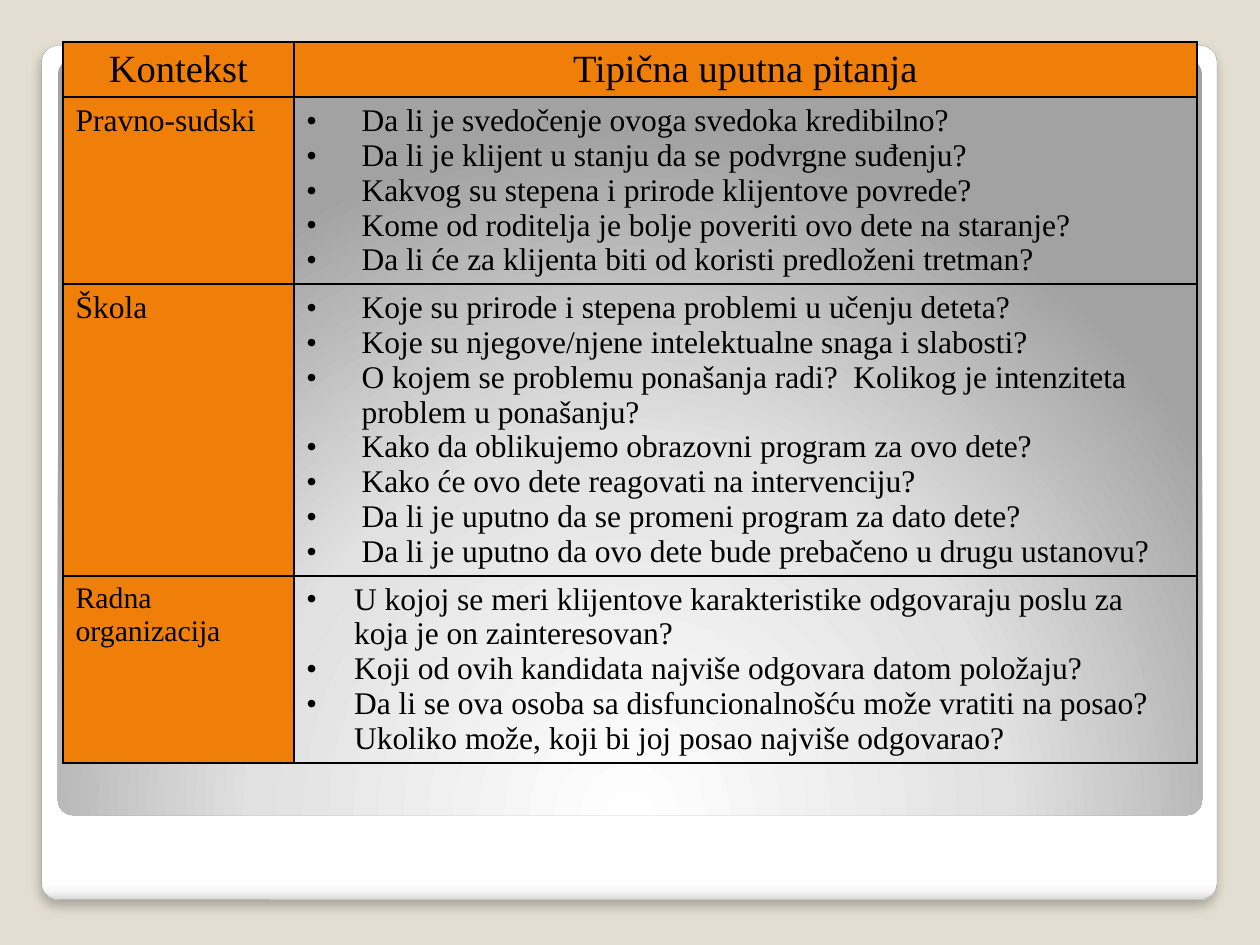
from dataclasses import dataclass

from lxml.etree import SubElement
from pptx import Presentation
from pptx.dml.color import RGBColor
from pptx.enum.shapes import MSO_SHAPE
from pptx.enum.text import PP_ALIGN
from pptx.oxml import parse_xml
from pptx.oxml.ns import nsdecls, qn
from pptx.util import Inches, Pt

COLORS = {
    "page": "E3DED1",
    "orange": "F07F09",
    "ink": "000000",
    "frame_line": "A4A4A4",
}
FONT = "Times New Roman"
BODY_SIZE = 18
HEADER_SIZE = 22
HEADERS = ("Kontekst", "Tipična uputna pitanja")
COLUMN_WIDTHS = (1.83, 7.17)
HEADER_HEIGHT = 0.44
HANGING = 0.38


@dataclass
class Panel:
    left: float
    top: float
    width: float
    height: float
    stops: tuple
    direction: str


@dataclass
class Context:
    name: str
    questions: tuple
    height: float
    indent: float = 0.44
    name_size: int = BODY_SIZE


PANELS = (
    Panel(0.33, 0.36, 9.33, 6.78,
          ((0, "FFFFFF"), (98, "FFFFFF"), (99, "F7F7F7"), (100, "DADADA")),
          '<a:lin ang="5400000" scaled="0"/>'),
    Panel(0.46, 0.47, 9.08, 6,
          ((0, "FFFFFF"), (55, "E1E1E1"), (100, "A2A2A2")),
          '<a:path path="circle"><a:fillToRect l="50000" t="175000" '
          'r="50000" b="-75000"/></a:path>'),
)

CONTEXTS = (
    Context("Pravno-sudski", (
        "Da li je svedočenje ovoga svedoka kredibilno?",
        "Da li je klijent u stanju da se podvrgne suđenju?",
        "Kakvog su stepena i prirode klijentove povrede?",
        "Kome od roditelja je bolje poveriti ovo dete na staranje?",
        "Da li će za klijenta biti od koristi predloženi tretman?",
    ), 1.48),
    Context("Škola", (
        "Koje su prirode i stepena problemi u učenju deteta?",
        "Koje su njegove/njene intelektualne snaga i slabosti?",
        "O kojem se problemu ponašanja radi?  Kolikog je intenziteta "
        "problem u ponašanju?",
        "Kako da oblikujemo obrazovni program za ovo dete?",
        "Kako će ovo dete reagovati na intervenciju?",
        "Da li je uputno da se promeni program za dato dete?",
        "Da li je uputno da ovo dete bude prebačeno u drugu ustanovu?",
    ), 2.31),
    Context("Radna organizacija", (
        "U kojoj se meri klijentove karakteristike odgovaraju poslu za "
        "koja je on zainteresovan?",
        "Koji od ovih kandidata najviše odgovara datom položaju?",
        "Da li se ova osoba sa disfuncionalnošću može vratiti na posao? "
        "Ukoliko može, koji bi joj posao najviše odgovarao?",
    ), 1.48, HANGING, 17),
)


def color(name: str) -> RGBColor:
    return RGBColor.from_string(COLORS[name])


def draw_panel(page, panel: Panel):
    """Draw a rounded panel with its gradient fill."""
    shape = page.shapes.add_shape(
        MSO_SHAPE.ROUNDED_RECTANGLE, Inches(panel.left), Inches(panel.top),
        Inches(panel.width), Inches(panel.height))
    shape.adjustments[0] = 0.02
    shape.shadow.inherit = False
    shape.line.fill.background()
    stops = "".join(
        f'<a:gs pos="{position * 1000}"><a:srgbClr val="{value}"/></a:gs>'
        for position, value in panel.stops)
    gradient = parse_xml(
        f'<a:gradFill {nsdecls("a")} rotWithShape="1"><a:gsLst>{stops}</a:gsLst>'
        f'{panel.direction}</a:gradFill>')
    shape.element.spPr.find(qn("a:prstGeom")).addnext(gradient)
    return shape


def add_frame_effects(shape) -> None:
    """Give the outer frame its hairline and soft shadow."""
    shape.line.color.rgb = color("frame_line")
    shape.line.width = Pt(0.16)
    effects = shape.element.spPr.find(qn("a:effectLst"))
    effects.append(parse_xml(
        f'<a:outerShdw {nsdecls("a")} blurRad="{Pt(6)}" dist="{Pt(4)}" '
        f'dir="5400000" algn="t" rotWithShape="0"><a:srgbClr val="{COLORS["ink"]}">'
        '<a:alpha val="25000"/></a:srgbClr></a:outerShdw>'))


def add_borders(cell) -> None:
    properties = cell._tc.get_or_add_tcPr()
    for position, side in enumerate(("lnL", "lnR", "lnT", "lnB")):
        properties.insert(position, parse_xml(
            f'<a:{side} {nsdecls("a")} w="{Pt(1.25)}"><a:solidFill>'
            f'<a:srgbClr val="{COLORS["ink"]}"/></a:solidFill></a:{side}>'))


def add_bullet(para, indent: float) -> None:
    properties = para._p.get_or_add_pPr()
    properties.set("marL", str(Inches(indent)))
    properties.set("indent", str(-Inches(indent)))
    SubElement(properties, qn("a:buFont")).set("typeface", FONT)
    SubElement(properties, qn("a:buChar")).set("char", "•")


def fill_cell(cell, lines: tuple, size: int = BODY_SIZE, orange: bool = True,
              align=PP_ALIGN.LEFT, indent: float = 0) -> None:
    """Write one paragraph per line, then set the fill and borders."""
    for index, line in enumerate(lines):
        frame = cell.text_frame
        para = frame.add_paragraph() if index else frame.paragraphs[0]
        para.alignment = align
        if indent:
            add_bullet(para, indent)
        span = para.add_run()
        span.text = line
        span.font.size = Pt(size)
        span.font.name = FONT
        span.font.bold = False
        span.font.color.rgb = color("ink")
    if orange:
        cell.fill.solid()
        cell.fill.fore_color.rgb = color("orange")
    else:
        cell.fill.background()
    add_borders(cell)


def draw_table(page) -> None:
    heights = [HEADER_HEIGHT] + [context.height for context in CONTEXTS]
    table = page.shapes.add_table(
        len(heights), len(HEADERS), Inches(0.5), Inches(0.33),
        Inches(sum(COLUMN_WIDTHS)), Inches(sum(heights))).table
    table.first_row = False
    table.horz_banding = False
    for column, width in zip(table.columns, COLUMN_WIDTHS):
        column.width = Inches(width)
    for row, height in zip(table.rows, heights):
        row.height = Inches(height)
    for index, header in enumerate(HEADERS):
        fill_cell(table.cell(0, index), (header,), HEADER_SIZE,
                  align=PP_ALIGN.CENTER)
    for index, context in enumerate(CONTEXTS, start=1):
        fill_cell(table.cell(index, 0), (context.name,), context.name_size)
        fill_cell(table.cell(index, 1), context.questions, orange=False,
                  indent=context.indent)


def main() -> None:
    deck = Presentation()
    deck.slide_width, deck.slide_height = Inches(10), Inches(7.5)
    page = deck.slides.add_slide(deck.slide_layouts[6])
    # Backdrop
    page.background.fill.solid()
    page.background.fill.fore_color.rgb = color("page")
    outer, _ = [draw_panel(page, panel) for panel in PANELS]
    add_frame_effects(outer)
    # Contexts and their questions
    draw_table(page)
    deck.save("out.pptx")


if __name__ == "__main__":
    main()
